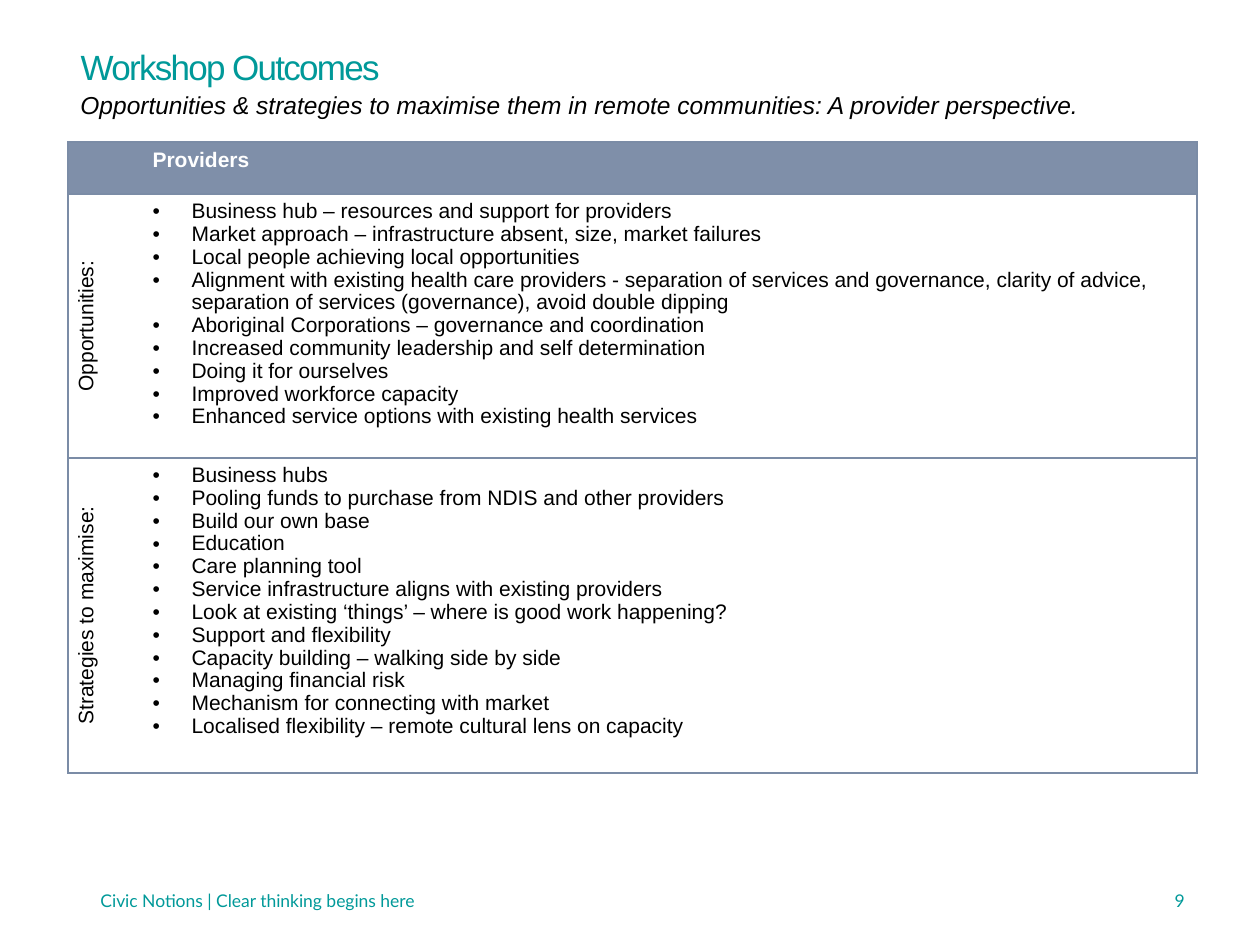
from lxml import etree
from pptx import Presentation
from pptx import util as u
from pptx.dml.color import RGBColor
from pptx.enum import text
from pptx.oxml import ns

SCALE = 914400 / 126
COLOURS = {"teal": "009999", "slate": "7F8FA9", "border": "7B8CA6",
           "black": "000000", "white": "FFFFFF"}
SECTIONS = [
    ("Opportunities:", 264, [
        "Business hub – resources and support for providers",
        "Market approach – infrastructure absent, size, market failures",
        "Local people achieving local opportunities",
        "Alignment with existing health care providers - separation of services and "
        "governance, clarity of advice, separation of services (governance), "
        "avoid double dipping",
        "Aboriginal Corporations – governance and coordination",
        "Increased community leadership and self determination",
        "Doing it for ourselves",
        "Improved workforce capacity",
        "Enhanced service options with existing health services",
    ]),
    ("Strategies to maximise:", 315, [
        "Business hubs",
        "Pooling funds to purchase from NDIS and other providers",
        "Build our own base",
        "Education",
        "Care planning tool",
        "Service infrastructure aligns with existing providers",
        "Look at existing ‘things’ – where is good work happening?",
        "Support and flexibility",
        "Capacity building – walking side by side",
        "Managing financial risk",
        "Mechanism for connecting with market",
        "Localised flexibility – remote cultural lens on capacity",
    ]),
]


def px(length):
    return u.Emu(round(length * SCALE))


def colour(name):
    return RGBColor.from_string(COLOURS[name])


class SlideBuilder:
    def __init__(self, slide, font):
        self.slide = slide
        self.font = font

    def style(self, frame, size, ink, font=None, bold=False, italic=False,
              align=text.PP_ALIGN.LEFT):
        for para in frame.paragraphs:
            para.alignment = align
            for span in para.runs:
                span.font.name = font or self.font
                span.font.size = u.Pt(size)
                span.font.bold = bold
                span.font.italic = italic
                span.font.color.rgb = colour(ink)

    def place(self, shape, left, top, width, height):
        shape.left, shape.top = px(left), px(top)
        shape.width, shape.height = px(width), px(height)

    def title(self, words, *area):
        title = self.slide.shapes.title
        self.place(title, *area)
        title.fill.solid()
        title.fill.fore_color.rgb = colour("white")
        frame = title.text_frame
        frame.text = words
        frame.auto_size = text.MSO_AUTO_SIZE.NONE
        frame.vertical_anchor = text.MSO_ANCHOR.TOP
        self.style(frame, 20, "teal")
        frame.paragraphs[0].runs[0].font._element.set("spc", "-100")

    def label(self, words, *area, anchor=text.MSO_ANCHOR.TOP, **style):
        box = self.slide.shapes.add_textbox(*map(px, area))
        frame = box.text_frame
        frame.word_wrap = True
        frame.vertical_anchor = anchor
        frame.text = words
        self.style(frame, **style)

    def table(self, left, top, columns, rows):
        frame = self.slide.shapes.add_table(
            len(rows), len(columns), px(left), px(top), px(sum(columns)), px(sum(rows)))
        table = frame.table
        table.first_row = table.horz_banding = False
        for column, width in zip(table.columns, columns):
            column.width = px(width)
        for row, height in zip(table.rows, rows):
            row.height = px(height)
        return table

    def cell(self, cell, words="", fill="white", ink="black", hidden_side="",
             **style):
        """Fill one cell and rule every side except hidden_side (L, R, T or B)."""
        cell.text = words
        self.style(cell.text_frame, 12, ink, **style)
        cell.fill.solid()
        cell.fill.fore_color.rgb = colour(fill)
        properties = cell._tc.get_or_add_tcPr()
        for index, side in enumerate("LRTB"):
            line = etree.Element(ns.qn(f"a:ln{side}"), w=str(u.Pt(0.75)))
            if side == hidden_side:
                etree.SubElement(line, ns.qn("a:noFill"))
            else:
                paint = etree.SubElement(line, ns.qn("a:solidFill"))
                etree.SubElement(paint, ns.qn("a:srgbClr"), val=COLOURS["border"])
            properties.insert(index, line)

    def bullets(self, cell):
        for para in cell.text_frame.paragraphs:
            para.line_spacing = 0.97
            properties = para._p.get_or_add_pPr()
            properties.set("marL", str(px(39)))
            properties.set("indent", str(px(-39)))
            etree.SubElement(properties, ns.qn("a:buFont"), typeface=self.font)
            etree.SubElement(properties, ns.qn("a:buChar"), char="•")


def main():
    deck = Presentation()
    deck.slide_width, deck.slide_height = px(1260), px(945)
    slide = deck.slides.add_slide(deck.slide_layouts[5])
    builder = SlideBuilder(slide, "Arial")

    footer = dict(size=10, ink="teal", font="Lato", anchor=text.MSO_ANCHOR.MIDDLE)
    builder.label("9", 903, 876, 294, 50, align=text.PP_ALIGN.RIGHT, **footer)
    builder.label("Civic Notions | Clear thinking begins here", 68, 876, 379, 50,
                  align=text.PP_ALIGN.CENTER, **footer)
    builder.title("Workshop Outcomes", 68, 39, 1129, 55)
    builder.label("Opportunities & strategies to maximise them in remote communities: "
                  "A provider perspective.", 68, 84, 1111, 43,
                  size=14, ink="black", italic=True)

    heights = [height for _, height, _ in SECTIONS]
    table = builder.table(68, 142, [72, 1057], [52, *heights])
    builder.cell(table.cell(0, 0), fill="slate", hidden_side="R")
    builder.cell(table.cell(0, 1), "Providers", fill="slate", ink="white",
                 hidden_side="L", bold=True)
    for row, (heading, _, points) in enumerate(SECTIONS, start=1):
        side, body = table.cell(row, 0), table.cell(row, 1)
        builder.cell(side, heading, hidden_side="R", align=text.PP_ALIGN.CENTER)
        side._tc.get_or_add_tcPr().set("vert", "vert270")
        builder.cell(body, "\n".join(points), hidden_side="L")
        builder.bullets(body)

    deck.save("out.pptx")


if __name__ == "__main__":
    main()
